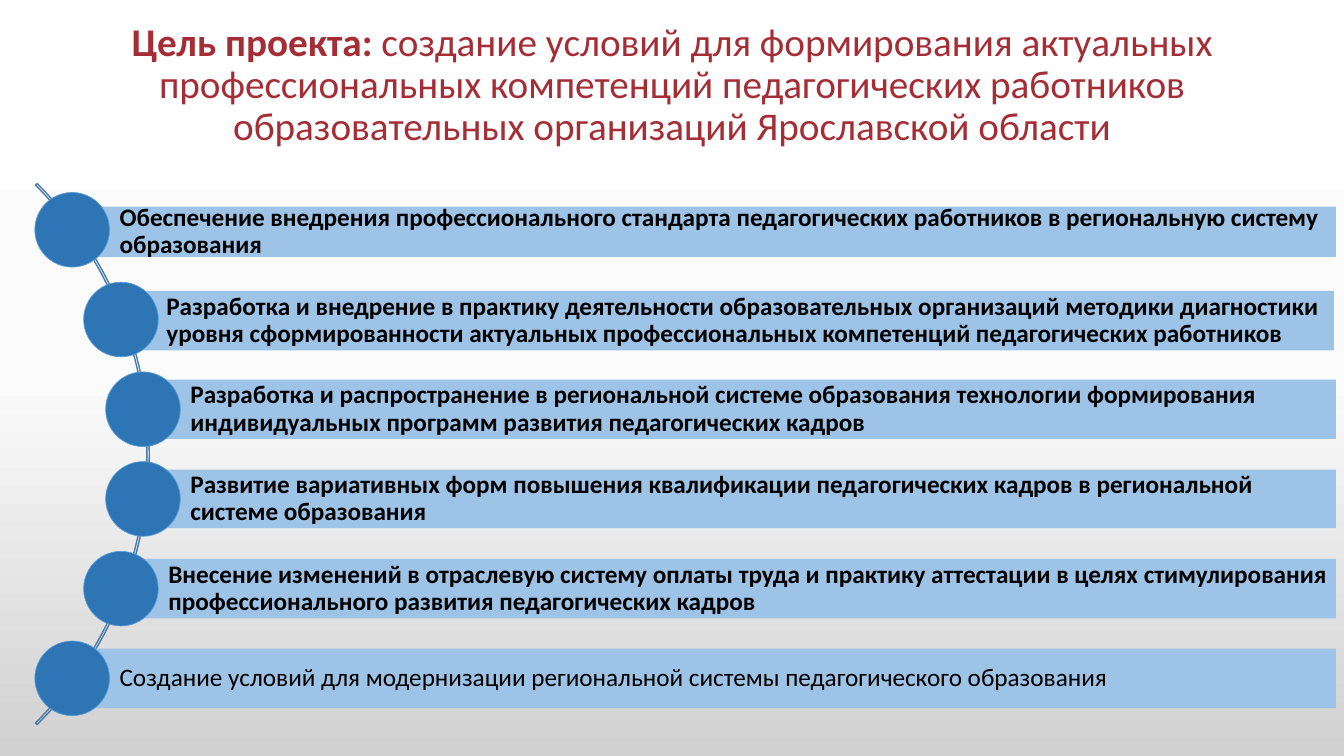
from copy import deepcopy
from math import sqrt

from lxml import etree
from pptx import Presentation
from pptx.dml.color import RGBColor
from pptx.enum.shapes import MSO_SHAPE as SHAPE
from pptx.enum.text import MSO_ANCHOR as ANCHOR, MSO_AUTO_SIZE as AUTOSIZE, PP_ALIGN as ALIGN
from pptx.oxml import parse_xml
from pptx.oxml.ns import nsdecls, qn
from pptx.util import Inches, Pt

COLORS = {
    "title": "A52D36", "text": "000000", "bar": "9DC3E6",
    "dot": "2E75B6", "dot_line": "5B9BD5", "arc": "497CAB", "shadow": "000000",
}
BACKGROUND = [(0, "FFFFFF"), (0.5, "FBFBFB"), (1, "D1D1D1")]
FONT = "Calibri"
TITLE = [
    ("Цель проекта: ", True),
    ("создание условий для формирования актуальных профессиональных компетенций "
     "педагогических работников образовательных организаций Ярославской области", False),
]
# text, bold, bar height, bar shift right, bar shift down
GOALS = [
    ("Обеспечение внедрения профессионального стандарта педагогических работников "
     "в региональную систему образования", True, 0.5, 0, 0.02),
    ("Разработка и внедрение в практику деятельности образовательных организаций "
     "методики диагностики уровня сформированности актуальных профессиональных "
     "компетенций педагогических работников", True, 0.59, -0.02, 0.01),
    ("Разработка и распространение в региональной системе образования технологии "
     "формирования индивидуальных программ развития педагогических кадров", True, 0.59, 0, 0),
    ("Развитие вариативных форм повышения квалификации педагогических кадров "
     "в региональной системе образования", True, 0.58, 0, 0),
    ("Внесение изменений в отраслевую систему оплаты труда и практику аттестации "
     "в целях стимулирования профессионального развития педагогических кадров",
     True, 0.59, 0, 0),
    ("Создание условий для модернизации региональной системы педагогического "
     "образования", False, 0.59, 0, 0),
]


def rgb(name):
    return RGBColor.from_string(COLORS[name])


def paint_background(s):
    fill = s.background.fill
    fill.gradient()
    fill.gradient_angle = 270
    stop_list = s.element.find(".//" + qn("a:gsLst"))
    stop_list.insert(1, deepcopy(stop_list[0]))
    for stop, (position, color) in zip(fill.gradient_stops, BACKGROUND):
        stop.position = position
        stop.color.rgb = RGBColor.from_string(color)


def add_text_shadow(r):
    effects = parse_xml(
        f'<a:effectLst {nsdecls("a")}><a:outerShdw blurRad="50800" dist="38100" '
        f'dir="5400000" algn="t" rotWithShape="0"><a:srgbClr val="{COLORS["shadow"]}">'
        '<a:alpha val="60000"/></a:srgbClr></a:outerShdw></a:effectLst>')
    r.font.fill._xPr.find(qn("a:solidFill")).addnext(effects)


def fill_title(s, left, top, width, height):
    sp = s.shapes.title
    sp.left, sp.top, sp.width, sp.height = map(Inches, (left, top, width, height))
    tf = sp.text_frame
    tf.word_wrap = True
    tf.auto_size = AUTOSIZE.NONE
    tf.vertical_anchor = ANCHOR.MIDDLE
    p = tf.paragraphs[0]
    p.alignment = ALIGN.CENTER
    p.line_spacing = 0.9
    for text, bold in TITLE:
        r = p.add_run()
        r.text = text
        r.font.size, r.font.name, r.font.bold = Pt(28), FONT, bold
        r.font.color.rgb = rgb("title")
        add_text_shadow(r)


def add_shape(s, kind, box, fill=None, line=None, line_width=0):
    sp = s.shapes.add_shape(kind, *map(Inches, box))
    sp.shadow.inherit = False
    if fill:
        sp.fill.solid()
        sp.fill.fore_color.rgb = rgb(fill)
    else:
        sp.fill.background()
    if line:
        sp.line.color.rgb = rgb(line)
        sp.line.width = Pt(line_width)
    else:
        sp.line.fill.background()
    return sp


def add_goal_bar(s, box, text, bold):
    tf = add_shape(s, SHAPE.RECTANGLE, box, "bar").text_frame
    tf.word_wrap = True
    tf.vertical_anchor = ANCHOR.MIDDLE
    tf.margin_left = Inches(0.47)
    tf.margin_top = tf.margin_right = tf.margin_bottom = Inches(0.05)
    p = tf.paragraphs[0]
    p.text = text
    p.alignment = ALIGN.LEFT
    p.line_spacing = 0.9
    p.font.size, p.font.name, p.font.bold = Pt(18), FONT, bold
    p.font.color.rgb = rgb("text")


def add_goal_list(s, left, top, right, size):
    """Arc whose frame is a square of the given size, with dots and bars along it."""
    arc = add_shape(s, SHAPE.BLOCK_ARC, (left, top, size, size), line="arc", line_width=1)
    for i, value in enumerate((189, 27, 0.003)):
        arc.adjustments[i] = value

    dot, pitch, radius = 0.74, 0.89, 3.76
    center_x, center_y = left + size / 2, top + size / 2
    for i, (text, bold, height, dx, dy) in enumerate(GOALS):
        offset = (i - (len(GOALS) - 1) / 2) * pitch
        x = center_x + sqrt(radius ** 2 - offset ** 2)
        y = center_y + offset
        add_goal_bar(s, (x + dx, y - height / 2 + dy, right - x, height), text, bold)
        add_shape(s, SHAPE.OVAL, (x - dot / 2, y - dot / 2, dot, dot), "dot", "dot_line", 0.5)


def main():
    prs = Presentation()
    prs.slide_width, prs.slide_height = Inches(13.33), Inches(7.5)
    s = prs.slides.add_slide(prs.slide_layouts[5])
    paint_background(s)
    fill_title(s, 0, 0.21, 13.33, 1.28)
    add_goal_list(s, -6.11, 0.71, 13.25, 7.59)
    prs.save("out.pptx")


if __name__ == "__main__":
    main()
